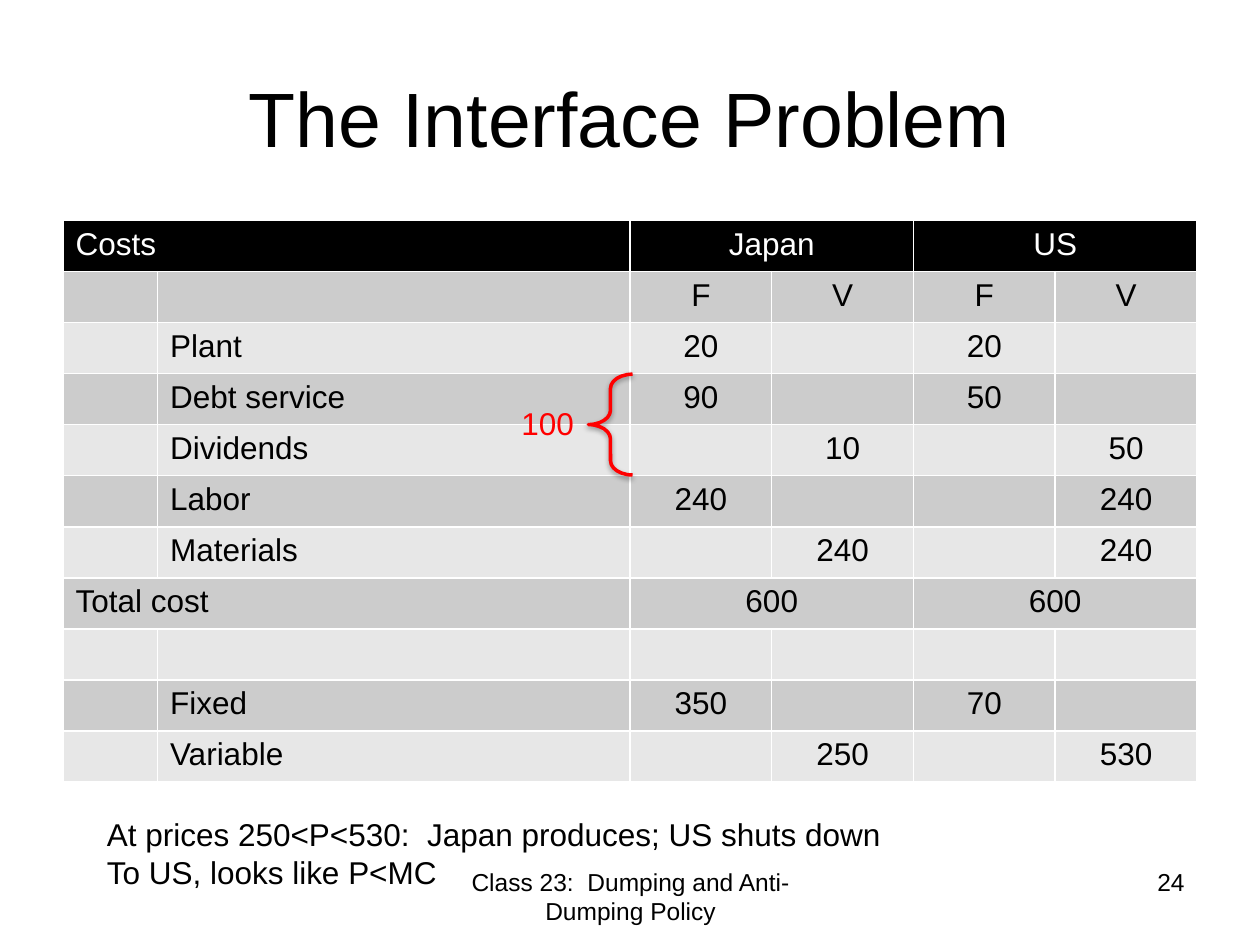
from lxml import etree
from pptx import Presentation
from pptx.dml.color import RGBColor
from pptx.enum import shapes, text
from pptx.oxml.ns import qn
from pptx.util import Inches, Pt

BLACK = RGBColor(0x00, 0x00, 0x00)
WHITE = RGBColor(0xFF, 0xFF, 0xFF)
RED = RGBColor(0xFF, 0x00, 0x00)
DARK_BAND = RGBColor(0xCC, 0xCC, 0xCC)
LIGHT_BAND = RGBColor(0xE7, 0xE7, 0xE7)
LEFT, CENTER, RIGHT = text.PP_ALIGN.LEFT, text.PP_ALIGN.CENTER, text.PP_ALIGN.RIGHT


def write(frame, words, size=18, color=BLACK, align=LEFT):
    frame.text = words
    for para in frame.paragraphs:
        para.alignment = align
        para.font.size = Pt(size)
        for span in para.runs:
            span.font.name = "Arial"
            span.font.size = Pt(size)
            span.font.bold = False
            span.font.color.rgb = color


def add_text(left, top, width, height, words, **style):
    box = page.shapes.add_textbox(Inches(left), Inches(top), Inches(width), Inches(height))
    box.text_frame.word_wrap = True
    write(box.text_frame, words, **style)
    return box


deck = Presentation()
deck.slide_width, deck.slide_height = Inches(10), Inches(7.5)
page = deck.slides.add_slide(deck.slide_layouts[6])

# Title and footer
title = add_text(0.5, 0.3, 9, 1.25, "The Interface Problem", size=44, align=CENTER)
title.text_frame.vertical_anchor = text.MSO_ANCHOR.MIDDLE
add_text(3.42, 6.83, 3.17, 0.52, "Class 23:  Dumping and Anti-Dumping Policy", size=14, align=CENTER)
add_text(7.17, 6.83, 2.33, 0.52, "24", size=14, align=RIGHT)

# Cost table: F is fixed, V is variable
costs = [
    ("Costs", "", "Japan", "", "US", ""),
    ("", "", "F", "V", "F", "V"),
    ("", "Plant", "20", "", "20", ""),
    ("", "Debt service", "90", "", "50", ""),
    ("", "Dividends", "", "10", "", "50"),
    ("", "Labor", "240", "", "", "240"),
    ("", "Materials", "", "240", "", "240"),
    ("Total cost", "", "600", "", "600", ""),
    ("", "", "", "", "", ""),
    ("", "Fixed", "350", "", "70", ""),
    ("", "Variable", "", "250", "", "530"),
]
widths = [0.75, 3.75] + [1.125] * 4
table = page.shapes.add_table(
    len(costs), len(widths), Inches(0.5), Inches(1.75), Inches(9), Inches(4.46)
).table
for column, width in zip(table.columns, widths):
    column.width = Inches(width)

for row, values in enumerate(costs):
    heading = row == 0
    band = BLACK if heading else DARK_BAND if row % 2 else LIGHT_BAND
    for col, value in enumerate(values):
        cell = table.cell(row, col)
        cell.fill.solid()
        cell.fill.fore_color.rgb = band
        write(cell.text_frame, value, color=WHITE if heading else BLACK,
              align=LEFT if col < 2 else CENTER)
    # Rows with a label in the first column join their cells in pairs
    if values[0]:
        for col in (0, 2, 4):
            table.cell(row, col).merge(table.cell(row, col + 1))

# Conclusion
add_text(0.75, 6.42, 8.17, 0.71,
         "At prices 250<P<530:  Japan produces; US shuts down\nTo US, looks like P<MC")

# Brace joining debt service and dividends, with its soft shadow
brace = page.shapes.add_shape(
    shapes.MSO_SHAPE.LEFT_BRACE, Inches(4.67), Inches(2.97), Inches(0.35), Inches(0.8)
)
brace.adjustments[0] = 0.324
brace.fill.background()
brace.line.color.rgb = RED
brace.line.width = Pt(2)
brace.shadow.inherit = False
effects = brace.element.spPr.find(qn("a:effectLst"))
shadow = etree.SubElement(effects, qn("a:outerShdw"), blurRad=str(Pt(3.1)),
                          dist=str(Pt(1.6)), dir="5400000", rotWithShape="0")
shade = etree.SubElement(shadow, qn("a:srgbClr"), val=str(BLACK))
etree.SubElement(shade, qn("a:alpha"), val="38000")
add_text(4.04, 3.16, 0.73, 0.4, "100", color=RED)

deck.save("out.pptx")
